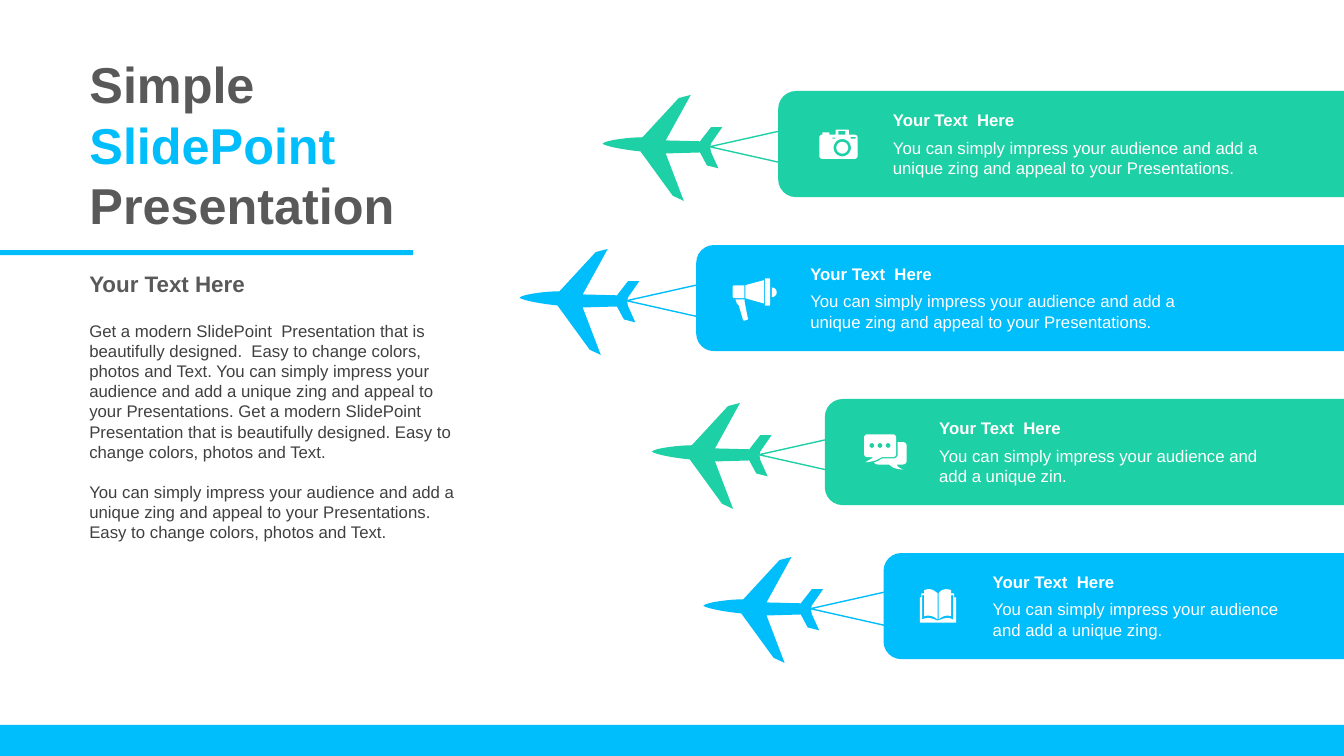
from math import cos, pi, sin

from pptx import Presentation
from pptx.dml.color import RGBColor
from pptx.enum.shapes import MSO_SHAPE
from pptx.enum.text import MSO_ANCHOR, MSO_AUTO_SIZE, PP_ALIGN
from pptx.util import Pt

RECT = MSO_SHAPE.RECTANGLE
TAB = MSO_SHAPE.ROUND_2_SAME_RECTANGLE
TOP = MSO_ANCHOR.TOP
LEFT = PP_ALIGN.LEFT
FIXED = MSO_AUTO_SIZE.NONE

BLUE = RGBColor(0x00, 0xBD, 0xFB)
GREEN = RGBColor(0x1E, 0xD0, 0xA6)
WHITE = RGBColor(0xFF, 0xFF, 0xFF)
GRAY = RGBColor(0x59, 0x59, 0x59)
DARK = RGBColor(0x40, 0x40, 0x40)

WIDTH, HEIGHT = 960, 540
FONT = "Arial"

# Outlines in points: M move, L line, C curve, O circle (centre, radius)
PLANE = """M 68.9 52.2 L 55.1 54.7 C 52.6 56.2 52.6 56.2 50.6 59.3
L 46.2 71 L 41.9 63.8 L 44.9 53.7 L 27.1 36.9 L 12.3 70 L 9.3 61.8
L 15.4 23.1 C 9.8 16.5 0 2.8 0.2 0 C 3.7 0 16.9 10.4 23.6 17
L 61.7 15.5 L 69.3 20 L 33.7 30.3 L 50.6 48.1 C 54.1 47.6 63.3 46.5 63.3 46.5"""
CAMERA = """M 2.2 3.6 L 2.2 1.9 L 7.2 1.9 L 7.2 3.6 L 11.7 3.6 L 11.7 0.7
C 11.7 0.2 12 0 12.4 0 L 20.4 0 C 20.8 0 21.1 0.2 21.1 0.7 L 21.1 3.6
L 25.2 3.6 C 26.4 3.6 27.4 4.6 27.4 5.8 L 27.4 18.7
C 27.4 19.9 26.4 20.9 25.2 20.9 L 2.2 20.9 C 1 20.9 0 19.9 0 18.7
L 0 5.8 C 0 4.6 1 3.6 2.2 3.6 O 16.4 12.9 6.2 O 16.4 12.9 4.2
M 13.7 0.9 L 18.7 0.9 L 18.7 3.6 L 13.7 3.6
M 9.4 5.8 L 11.5 5.8 L 11.5 6.5 L 9.4 6.5
M 22.3 5.2 L 25.9 5.2 L 25.9 6.5 L 22.3 6.5"""
HORN = """M 8.6 15.1 L 8.6 16.6 L 8.8 18 L 10.8 28.1 C 11.3 28.8 11 29.5 10.1 29.8
L 8.6 30.2 C 7.8 30.3 7.4 29.8 7.2 28.9 L 4.4 19.4 C 3.7 18.6 3.3 18.4 3 17.8
L 2 15.1 M 28.1 6.6 C 29.8 6.6 31.5 8 31.5 10.1 C 31.5 12 30 13.4 28.1 13.4
M 1.4 5 L 8.4 5 L 8.4 14.2 L 1.4 14.2 C 0.5 14.2 0 13.6 0 12.8
L 0 6.4 C 0 5.6 0.5 5 1.4 5 M 22.3 1.4 L 22.3 18 L 9.2 14.3 L 9.2 4.9
M 23.8 0 L 26.2 0 C 26.6 0 26.9 0.3 26.9 0.7 L 26.9 18.8
C 26.9 19.2 26.6 19.5 26.2 19.5 L 23.8 19.5 C 23.4 19.5 23.1 19.2 23.1 18.8
L 23.1 0.7 C 23.1 0.3 23.4 0 23.8 0"""
CHAT = """M 2.6 0 L 20.4 0 C 21.9 0 23 1.2 23 2.6 L 23 13.7
C 23 15.3 21.9 16.4 20.4 16.4 L 12.5 16.4 C 9 18.6 7 19.5 1 20
C 4 18 5.2 17.8 6.3 16.4 L 2.6 16.4 C 1.1 16.4 0 15.3 0 13.7
L 0 2.6 C 0 1.1 1.1 0 2.6 0 O 5.6 8 1.7 O 11.4 8 1.7 O 17.2 8 1.7
M 24 5.6 L 27.7 5.6 C 29.3 5.6 30.5 6.8 30.5 8.4 L 30.5 18.9
C 30.5 20.4 29.3 21.6 27.7 21.6 L 23.4 21.6 C 24 23 24.5 23.8 28 25.2
C 22 24.8 20.5 24 18 21.6 L 10 21.6 C 8.6 21.6 7.7 21 7.2 20.2
C 9 19.5 11 18.8 12.7 17.3 L 21 17.3 C 22.6 17.3 24 16 24 14.4"""
BOOK = """M 12.2 22.3 L 13 22.3 C 17.3 20.9 19.4 19.4 23.8 21.6 L 23.8 4.3
L 22.3 4.3 L 22.3 19.4 C 19.4 18 15.8 19.4 13.3 21.6 L 13.3 2.9
C 15 0.7 17 0 18.7 0 C 20 0 21 0.2 22.3 0.7 L 22.3 2.9 L 24.5 2.9
L 24.5 5.8 L 25.9 5.8 L 25.9 23.8 L 0 23.8 L 0 5.8 L 1 5.8 L 1 2.9
L 3 2.9 L 3 0.7 C 4.3 0.2 5.3 0 6.5 0 C 8.6 0 10 0.7 12.6 2.9
L 12.6 21.6 C 10 19.4 6.5 18 3 19.4 L 3 4.3 L 1.6 4.3 L 1.6 21.6
C 6 19.4 8.6 20.9 12.2 22.3"""

HEAD = "Your Text  Here"
LEAD = "You can simply impress your audience and add a unique "
FULL = LEAD + "zing and appeal to your Presentations."
# Panel left, plane left, text left, text width, colour, icon, icon offset, text
ROWS = [
    (555.9, 445.2, 630.7, 285.8, GREEN, CAMERA, (29.3, 27.6), FULL),
    (497.3, 385.9, 571.7, 287.3, BLUE, HORN, (26, 23.8), FULL),
    (589.2, 480.4, 663.8, 259.2, GREEN, CHAT, (28, 25.2), LEAD + "zin."),
    (631.1, 517.2, 702, 238.3, BLUE, BOOK, (26, 25.9), LEAD + "zing."),
]
FIRST, PITCH, TALL = 65, 110, 75.8
BODY = [
    "Get a modern SlidePoint  Presentation that is beautifully designed.  "
    "Easy to change colors, photos and Text. You can simply impress your "
    "audience and add a unique zing and appeal to your Presentations. "
    "Get a modern SlidePoint  Presentation that is beautifully designed. "
    "Easy to change colors, photos and Text.",
    FULL + " Easy to change colors, photos and Text.",
]


def paint(shape, color):
    shape.shadow.inherit = False
    shape.fill.solid()
    shape.fill.fore_color.rgb = color
    shape.line.fill.background()


def style(font, size, color, bold):
    font.name, font.size, font.bold = FONT, Pt(size), bold
    font.color.rgb = color


def trace(outline):
    """Turn an outline into lists of points, one for each contour."""
    marks = iter(outline.split())
    rings = []
    for mark in marks:
        count = {"M": 2, "L": 2, "C": 6, "O": 3}[mark]
        nums = [float(next(marks)) for _ in range(count)]
        if mark == "M":
            rings.append([tuple(nums)])
        elif mark == "L":
            rings[-1].append(tuple(nums))
        elif mark == "O":
            x, y, r = nums
            turns = [pi * k / 16 for k in range(32)]
            rings.append([(x + r * cos(a), y + r * sin(a)) for a in turns])
        else:
            ctrl = [rings[-1][-1], *zip(nums[::2], nums[1::2])]
            for t in (k / 8 for k in range(1, 9)):
                u = 1 - t
                parts = (u ** 3, 3 * u * u * t, 3 * u * t * t, t ** 3)
                rings[-1].append(tuple(
                    sum(f * p[i] for f, p in zip(parts, ctrl)) for i in (0, 1)))
    return rings


def draw(slide, outline, x, y, close=True):
    pen = None
    for ring in trace(outline):
        spots = [(Pt(a), Pt(b)) for a, b in ring]
        if pen is None:
            pen = slide.shapes.build_freeform(*spots[0])
        else:
            pen.move_to(*spots[0])
        pen.add_line_segments(spots[1:], close=close)
    return pen.convert_to_shape(Pt(x), Pt(y))


def bar(slide, x, y, w, h):
    paint(slide.shapes.add_shape(RECT, Pt(x), Pt(y), Pt(w), Pt(h)), BLUE)


def label(slide, x, y, w, h, lines, size, color, bold=False):
    frame = slide.shapes.add_textbox(Pt(x), Pt(y), Pt(w), Pt(h)).text_frame
    frame.word_wrap = True
    frame.text = "\n".join(lines)
    for para in frame.paragraphs:
        style(para.runs[0].font, size, color, bold)
    for para in frame.paragraphs[1:]:
        para.space_before = Pt(size * 1.2)


def intro(slide, x, y, w):
    # Title in two colours
    title = slide.shapes.title
    title.left, title.top, title.width, title.height = Pt(x), Pt(y), Pt(w + 5), Pt(138.2)
    frame = title.text_frame
    frame.word_wrap, frame.auto_size, frame.vertical_anchor = True, FIXED, TOP
    para = frame.paragraphs[0]
    para.alignment = LEFT
    for word, color in (("Simple ", GRAY), ("SlidePoint ", BLUE), ("Presentation", GRAY)):
        run = para.add_run()
        run.text = word
        style(run.font, 36, color, True)
    # Body text, heading and rule
    label(slide, x, y + 190.8, w, 167, BODY, 12, DARK)
    label(slide, x, y + 154.8, w, 26.6, ["Your Text Here"], 16, GRAY, True)
    bar(slide, 0, y + 144, 295.2, 3.6)


def banner(slide, top, row):
    left, nose, text, wide, color, icon, (dx, dy), words = row
    # Panel rounded on its left side: a tab turned a quarter to the left
    span = WIDTH - left
    panel = slide.shapes.add_shape(
        TAB, Pt(left + (span - TALL) / 2), Pt(top + (TALL - span) / 2), Pt(TALL), Pt(span))
    panel.rotation = 270
    paint(panel, color)
    # Text and icon
    label(slide, text, top + 10, wide, 21.6, [HEAD], 12, WHITE, True)
    label(slide, text, top + 29.5, wide, 36, [words], 12, WHITE)
    paint(draw(slide, icon, left + dx, top + dy), WHITE)
    # Plane and its tow ropes
    plane = draw(slide, PLANE, nose, top + 2.7)
    plane.rotation = 315
    paint(plane, color)
    ropes = draw(slide, "M 56.2 0 L 0 12.6 L 56.2 25.2", nose + 61.7, top + 27.2, False)
    ropes.shadow.inherit = False
    ropes.fill.background()
    ropes.line.color.rgb = color
    ropes.line.width = Pt(1)


def main():
    deck = Presentation()
    deck.slide_width, deck.slide_height = Pt(WIDTH), Pt(HEIGHT)
    slide = deck.slides.add_slide(deck.slide_layouts[5])
    bar(slide, 0, 517.7, WIDTH, 22.3)
    for i, row in enumerate(ROWS):
        banner(slide, FIRST + i * PITCH, row)
    intro(slide, 56.7, 34.6, 277.2)
    deck.save("out.pptx")


if __name__ == "__main__":
    main()
